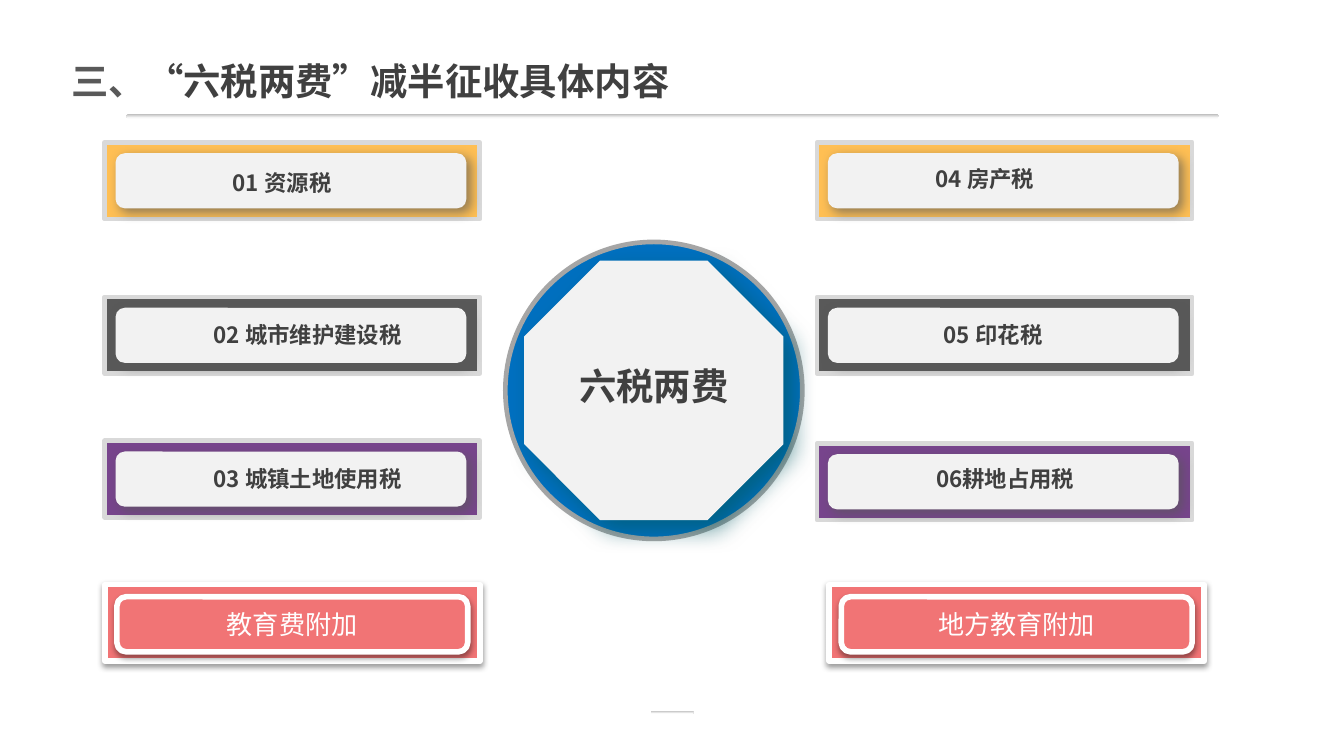
from pptx import Presentation
from pptx.util import Inches, Pt
from pptx.dml.color import RGBColor
from pptx.enum.shapes import MSO_SHAPE
from pptx.enum.text import MSO_ANCHOR, PP_ALIGN
from lxml.etree import SubElement
from pptx.oxml.ns import qn

C = {"gold": "FFBF53", "grey": "595959", "purple": "77448C", "coral": "F17475",
     "blue": "0070C0", "panel": "F2F2F2", "edge": "D9D9D9", "ring": "A6A6A6",
     "rule": "BFBFBF", "white": "FFFFFF", "ink": "404040", "teal": "005962", "black": "000000"}
CJK = "Noto Sans CJK SC"
COLS = (0.78, 6.08)
ROWS = (1.06, 2.21, 3.28, 4.35)
SOFT = ("grey", 64, 6, 3, 45)
DROP = ("black", 38, 3.1, 1.6, 90)
DEEP = ("teal", 64, 13, 7, 45)

prs = Presentation()
prs.slide_width = Inches(10)
prs.slide_height = prs.slide_width * 9 // 16
s = prs.slides.add_slide(prs.slide_layouts[5])


def add_shape(kind, box, fill, line=None, width=2.5, shadow=None, adj=None):
    sp = s.shapes.add_shape(kind, *map(Inches, box))
    sp.shadow.inherit = False
    if adj is not None:
        sp.adjustments[0] = adj
    sp.fill.solid()
    sp.fill.fore_color.rgb = RGBColor.from_string(C[fill])
    if line:
        sp.line.color.rgb = RGBColor.from_string(C[line])
        sp.line.width = Pt(width)
    else:
        sp.line.fill.background()
    if shadow:
        color, alpha, blur, dist, angle = shadow
        effects = sp._element.spPr.find(qn("a:effectLst"))
        outer = SubElement(effects, qn("a:outerShdw"), blurRad=str(Pt(blur)), dist=str(Pt(dist)),
                           dir=str(angle * 60000), algn="ctr", rotWithShape="0")
        clr = SubElement(outer, qn("a:srgbClr"), val=C[color])
        SubElement(clr, qn("a:alpha"), val=str(alpha * 1000))
    return sp


def write(sp, runs, size, bold, align, anchor=MSO_ANCHOR.TOP, inset=(0.1, 0.05)):
    tf = sp.text_frame
    frame = {"word_wrap": True, "vertical_anchor": anchor,
             "margin_left": Inches(inset[0]), "margin_right": Inches(inset[0]),
             "margin_top": Inches(inset[1]), "margin_bottom": Inches(inset[1])}
    for name, value in frame.items():
        setattr(tf, name, value)
    p = tf.paragraphs[0]
    p.alignment = align
    for text, font, color in runs:
        r = p.add_run()
        r.text = text
        for name, value in {"size": Pt(size), "bold": bold, "name": font}.items():
            setattr(r.font, name, value)
        r.font.color.rgb = RGBColor.from_string(C[color])
        rPr = r._r.get_or_add_rPr()
        rPr.set("lang", "zh-CN")
        SubElement(rPr, qn("a:ea"), typeface=CJK)


for box in ((0.94, 0.85, 8.13, 0.03), (4.84, 5.29, 0.32, 0.02)):
    sp = add_shape(MSO_SHAPE.ROUNDED_RECTANGLE, box, "rule", adj=0.5)
    sp.fill.gradient()
    sp.fill.gradient_angle = 270
    for stop, color, position in zip(sp.fill.gradient_stops, ("rule", "white"), (0, 1)):
        stop.color.rgb = RGBColor.from_string(C[color])
        stop.position = position

title = s.shapes.title
for name, value in zip(("left", "top", "width", "height"), (0.45, 0.39, 5.24, 0.75)):
    setattr(title, name, Inches(value))
write(title, [("三、", "Arial", "grey"), ("“六税两费”减半征收具体内容", "League Spartan", "ink")],
      20, True, PP_ALIGN.LEFT, inset=(0.08, 0.04))

taxes = [(0, 0, "gold", "01 资源税", 1.03, 1.21),
         (0, 1, "grey", "02 城市维护建设税", 1.22, 2.34),
         (0, 2, "purple", "03 城镇土地使用税", 1.22, 3.41),
         (1, 0, "gold", "04 房产税", 6.26, 1.18),
         (1, 1, "grey", "05 印花税", 6.32, 2.34),
         (1, 2, "purple", "06耕地占用税", 6.41, 3.41)]
for col, row, color, text, left, top in taxes:
    x, y = COLS[col], ROWS[row] + (0.02 if (col, row) == (1, 2) else 0)
    add_shape(MSO_SHAPE.ROUNDED_RECTANGLE, (x, y, 2.79, 0.57), color, "edge", adj=0)
    add_shape(MSO_SHAPE.ROUNDED_RECTANGLE, (x + 0.08, y + 0.08, 2.61, 0.41), "panel", shadow=SOFT)
    label = s.shapes.add_textbox(*map(Inches, (left, top, 2.14, 0.31)))
    write(label, [(text, CJK, "ink")], 12, True, PP_ALIGN.CENTER, inset=(0, 0.05))

add_shape(MSO_SHAPE.OVAL, (3.76, 1.8, 2.21, 2.21), "blue", "ring")
add_shape(MSO_SHAPE.OCTAGON, (3.9, 1.94, 1.93, 1.93), "panel", shadow=DEEP)
hub = s.shapes.add_textbox(*map(Inches, (4.04, 2.65, 1.65, 0.44)))
write(hub, [("六税两费", CJK, "ink")], 20, True, PP_ALIGN.CENTER)

for x, text in ((COLS[0], "教育费附加"), (COLS[1] + 0.09, "地方教育附加")):
    y = ROWS[3]
    add_shape(MSO_SHAPE.ROUNDED_RECTANGLE, (x, y, 2.79, 0.57), "coral", "white", 3, DROP, 0)
    fee = add_shape(MSO_SHAPE.ROUNDED_RECTANGLE, (x + 0.09, y + 0.09, 2.61, 0.41),
                    "coral", "white", 3, DROP)
    write(fee, [(text, "Arial", "white")], 14, False, PP_ALIGN.CENTER, MSO_ANCHOR.MIDDLE)

prs.save("out.pptx")
